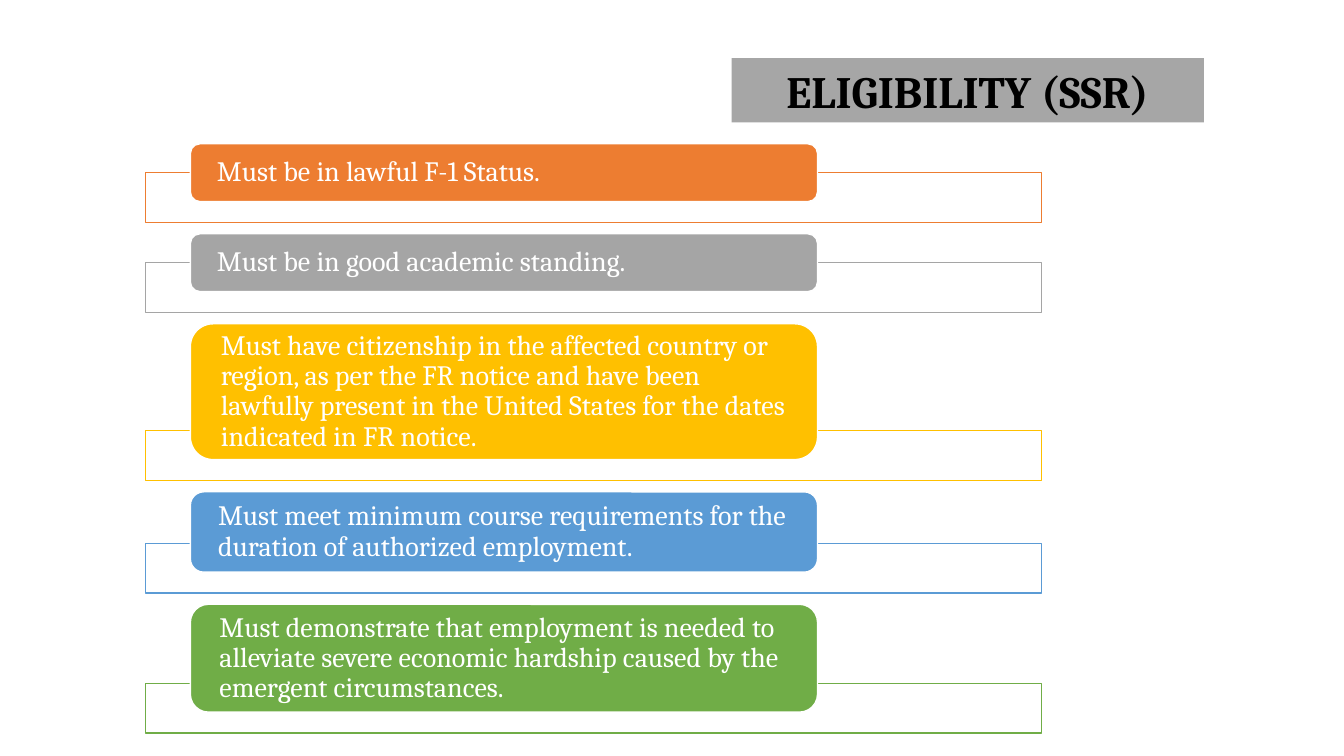
from pptx import Presentation
from pptx.dml.color import RGBColor
from pptx.enum.shapes import MSO_SHAPE
from pptx.enum.text import MSO_ANCHOR, MSO_AUTO_SIZE, PP_ALIGN
from pptx.oxml.ns import qn
from pptx.util import Pt
from lxml.etree import SubElement


def paint(colour_format, value):
    colour_format.rgb = RGBColor.from_string(value)


def add_block(kind, left, top, width, height, fill, line):
    block = page.shapes.add_shape(kind, Pt(left), Pt(top), Pt(width), Pt(height))
    block.shadow.inherit = False
    block.fill.solid()
    paint(block.fill.fore_color, fill)
    paint(block.line.color, line)
    block.line.width = Pt(1)
    return block


deck = Presentation()
deck.slide_width, deck.slide_height = Pt(960), Pt(540)
page = deck.slides.add_slide(deck.slide_layouts[5])

# Title on a grey band
title = page.shapes.title
title.left, title.top, title.width, title.height = Pt(522.5), Pt(41.5), Pt(337.5), Pt(46)
title.fill.solid()
paint(title.fill.fore_color, "A6A6A6")
frame = title.text_frame
frame.auto_size = MSO_AUTO_SIZE.NONE
frame.vertical_anchor = MSO_ANCHOR.MIDDLE
para = frame.paragraphs[0]
para.alignment = PP_ALIGN.CENTER
span = para.add_run()
span.text = "ELIGIBILITY (SSR)"
span.font.name, span.font.size, span.font.bold = "Cambria", Pt(32), True
paint(span.font.color, "000000")

# Requirements: wording, colour, bar height
requirements = [
    ("Must be in lawful F-1 Status.", "ED7D31", 41.3),
    ("Must be in good academic standing.", "A5A5A5", 41.3),
    ("Must have citizenship in the affected country or region, as per the FR notice "
     "and have been  lawfully present in the United States for the dates indicated "
     "in FR notice.", "FFC000", 97),
    ("Must meet minimum course requirements for the duration of authorized "
     "employment.", "5B9BD5", 57.4),
    ("Must demonstrate that employment is needed to alleviate severe economic "
     "hardship caused by the emergent circumstances.", "70AD47", 77),
]
panel_height, overlap, gap = 35.7, 20.7, 8
bar_top = 102.7

for wording, colour, bar_height in requirements:
    # Outlined panel behind the lower part of the bar
    panel_top = bar_top + bar_height - overlap
    panel = add_block(MSO_SHAPE.RECTANGLE, 104, panel_top, 640, panel_height, "FFFFFF", colour)
    panel_colour = panel.fill._xPr.find(qn("a:solidFill"))[0]
    SubElement(panel_colour, qn("a:alpha")).set("val", "90000")

    # Coloured bar with its text
    bar = add_block(MSO_SHAPE.ROUNDED_RECTANGLE, 136, bar_top, 448, bar_height, colour, "FFFFFF")
    frame = bar.text_frame
    frame.word_wrap = True
    frame.vertical_anchor = MSO_ANCHOR.MIDDLE
    frame.margin_left = frame.margin_right = Pt(17)
    frame.margin_top = frame.margin_bottom = Pt(0)
    para = frame.paragraphs[0]
    para.alignment = PP_ALIGN.LEFT
    para.line_spacing = 0.9
    span = para.add_run()
    span.text = wording
    span.font.name, span.font.size = "Cambria", Pt(20)
    paint(span.font.color, "FFFFFF")

    bar_top = panel_top + panel_height + gap

deck.save("out.pptx")
